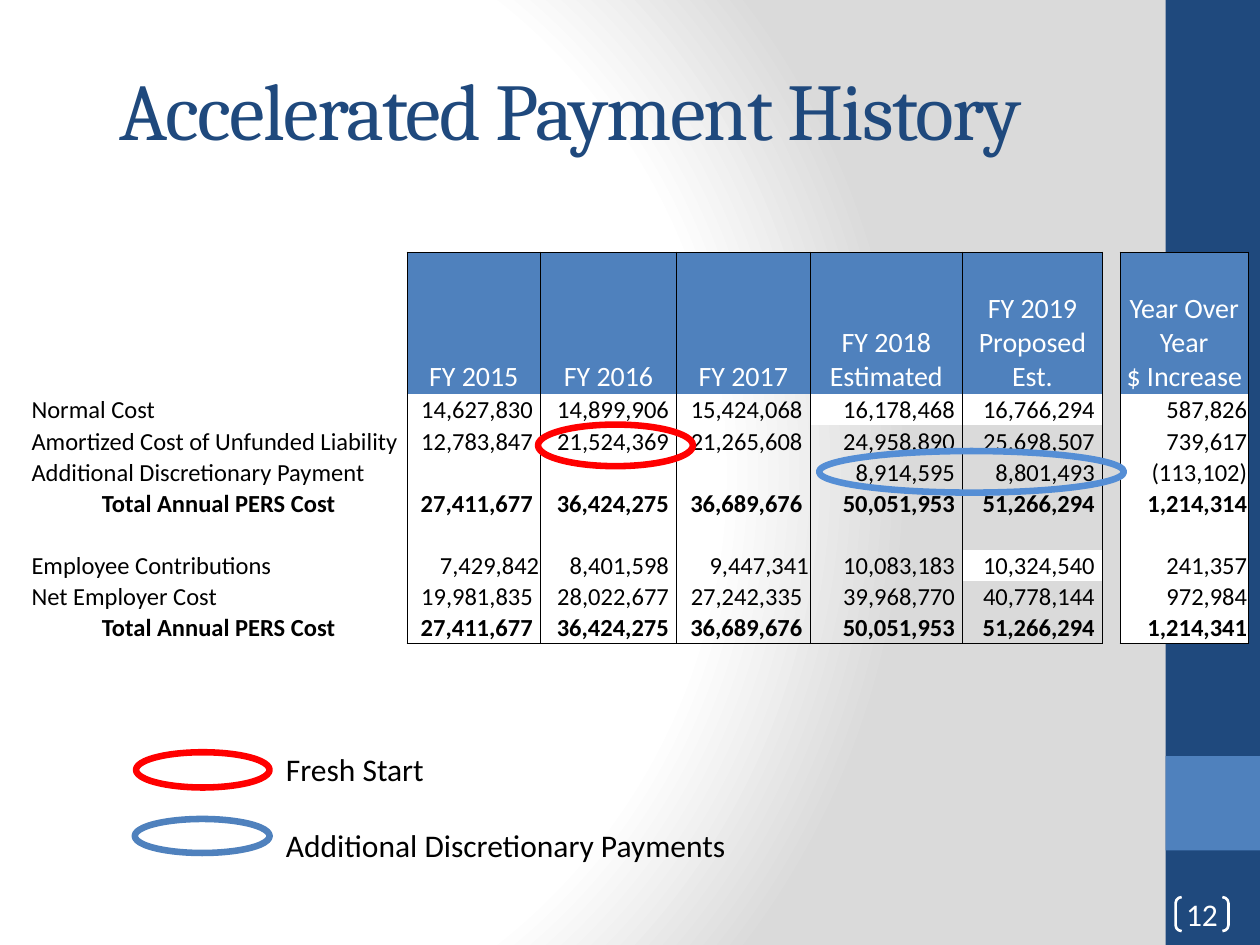
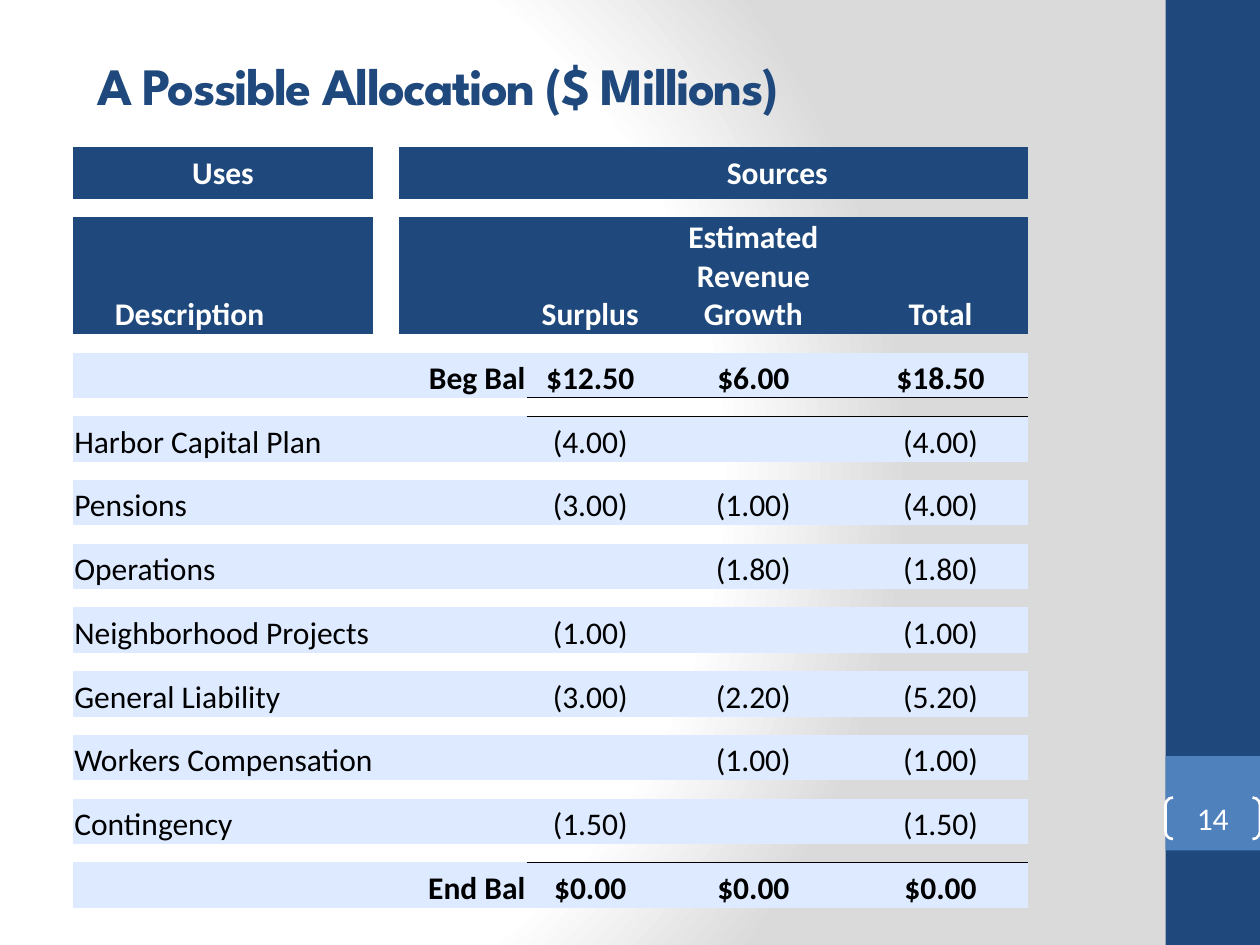
from dataclasses import dataclass
from lxml.etree import SubElement
from pptx import Presentation
from pptx.dml.color import RGBColor
from pptx.enum.shapes import MSO_SHAPE
from pptx.enum.text import MSO_ANCHOR, MSO_AUTO_SIZE, PP_ALIGN
from pptx.oxml import parse_xml
from pptx.oxml.ns import nsdecls, qn
from pptx.util import Inches, Pt

NO_STYLE_TABLE = "{2D5ABB26-0587-4C30-8999-92F81FD0307C}"
LEFT, CENTER, RIGHT = PP_ALIGN.LEFT, PP_ALIGN.CENTER, PP_ALIGN.RIGHT


@dataclass(frozen=True)
class Theme:
    navy: str = "1F497D"
    blue: str = "4F81BD"
    light_blue: str = "558ED5"
    pale_blue: str = "DDEAFF"
    red: str = "FF0000"
    white: str = "FFFFFF"
    gray: str = "DADADA"
    black: str = "000000"
    body_font: str = "Calibri"
    serif_font: str = "Cambria"
    display_font: str = "League Spartan"
    serif_title_size: int = 46
    display_title_size: int = 30
    text_size: int = 18
    header_size: int = 16
    figure_size: int = 14
    empty_size: int = 1
    ring_width: float = 3.75
    bracket_width: float = 1.5
    border_width: float = 0.5


THEME = Theme()


class Deck:
    """Holds the theme and the slide being filled."""

    def __init__(self, theme):
        self.theme = theme
        self.presentation = Presentation()
        self.presentation.slide_width = Inches(10)
        self.presentation.slide_height = Inches(7.5)
        self.slide = None
        self.paint_master_background()

    def paint_master_background(self):
        master = self.presentation.slide_master
        master.background.fill.solid()
        background = master.element.find(".//" + qn("p:bgPr"))
        stops = ((0, self.theme.white), (75, self.theme.white), (100, self.theme.gray))
        stop_list = "".join(
            f'<a:gs pos="{position * 1000}"><a:srgbClr val="{color}"/></a:gs>'
            for position, color in stops)
        background[0] = parse_xml(
            f'<a:gradFill {nsdecls("a")} rotWithShape="1"><a:gsLst>{stop_list}</a:gsLst>'
            '<a:path path="circle"><a:fillToRect l="20000" t="50000" r="100000" b="50000"/>'
            '</a:path></a:gradFill>')

    def add_master_bands(self):
        """Draw the side bands on the slide, then move them behind the master's parts."""
        tree = self.presentation.slide_master.element.find(".//" + qn("p:spTree"))
        bands = ((0, 7.5, self.theme.navy), (6, 0.75, self.theme.blue))
        for index, (top, height, color) in enumerate(bands):
            band = self.add_shape(MSO_SHAPE.RECTANGLE, (9.25, top, 0.75, height), fill=color)
            band.element.nvSpPr.cNvPr.set("id", str(101 + index))
            tree.insert(2 + index, band.element)

    def add_slide(self):
        first = self.slide is None
        layout = self.presentation.slide_layouts[5]
        self.slide = self.presentation.slides.add_slide(layout)
        if first:
            self.add_master_bands()

    def format_paragraph(self, paragraph, size, color, bold=False, font=None, align=LEFT):
        paragraph.alignment = align
        for run in paragraph.runs:
            run.font.name = font or self.theme.body_font
            run.font.size = Pt(size)
            run.font.bold = bold
            run.font.color.rgb = RGBColor.from_string(color)

    def add_title(self, text, box, font, size, bold=False):
        title = self.slide.shapes.title
        title.left, title.top, title.width, title.height = map(Inches, box)
        text_frame = title.text_frame
        text_frame.text = text
        text_frame.auto_size = MSO_AUTO_SIZE.NONE
        text_frame.vertical_anchor = MSO_ANCHOR.MIDDLE
        paragraph = text_frame.paragraphs[0]
        self.format_paragraph(paragraph, size, self.theme.navy, bold, font)
        paragraph.runs[0].font._element.set("spc", "-100")

    def add_shape(self, kind, box, fill=None, line=None, line_width=1):
        shape = self.slide.shapes.add_shape(kind, *map(Inches, box))
        shape.shadow.inherit = False
        if fill:
            shape.fill.solid()
            shape.fill.fore_color.rgb = RGBColor.from_string(fill)
        else:
            shape.fill.background()
        if line:
            shape.line.color.rgb = RGBColor.from_string(line)
            shape.line.width = Pt(line_width)
        else:
            shape.line.fill.background()
        return shape

    def add_ring(self, box, color):
        self.add_shape(MSO_SHAPE.OVAL, box, line=color, line_width=self.theme.ring_width)

    def add_page_number(self, number, box):
        bracket = self.add_shape(MSO_SHAPE.DOUBLE_BRACKET, box, line=self.theme.white,
                                 line_width=self.theme.bracket_width)
        bracket.adjustments[0] = 0.18
        text_frame = bracket.text_frame
        text_frame.margin_left = text_frame.margin_right = 0
        text_frame.margin_top = text_frame.margin_bottom = 0
        text_frame.vertical_anchor = MSO_ANCHOR.MIDDLE
        text_frame.text = str(number)
        self.format_paragraph(text_frame.paragraphs[0], self.theme.text_size,
                              self.theme.white, align=CENTER)

    def add_legend(self, labels, box):
        text_frame = self.slide.shapes.add_textbox(*map(Inches, box)).text_frame
        text_frame.word_wrap = True
        text_frame.margin_left = Inches(1.1)
        text_frame.text = "\n".join(labels)
        for paragraph in text_frame.paragraphs:
            self.format_paragraph(paragraph, self.theme.text_size, self.theme.black)
        for paragraph in text_frame.paragraphs[1:]:
            paragraph.space_before = Pt(22)

    def add_table(self, left, top, widths, heights):
        """Add an empty, unstyled table; widths are in inches, heights are lengths."""
        frame = self.slide.shapes.add_table(
            len(heights), len(widths), Inches(left), Inches(top),
            Inches(sum(widths)), sum(heights))
        table = frame.table
        table.first_row = table.horz_banding = False
        table._tbl.tblPr.find(qn("a:tableStyleId")).text = NO_STYLE_TABLE
        for column, width in zip(table.columns, widths):
            column.width = Inches(width)
        for row, height in zip(table.rows, heights):
            row.height = height
        for cell in table.iter_cells():
            cell.margin_left = cell.margin_right = cell.margin_top = Inches(0.01)
            cell.margin_bottom = 0
            cell.vertical_anchor = MSO_ANCHOR.BOTTOM
            cell.fill.background()
            paragraph = cell.text_frame.paragraphs[0]
            SubElement(paragraph._p, qn("a:endParaRPr"), sz=str(self.theme.empty_size * 100))
        return table

    def fill_cell(self, cell, color):
        cell.fill.solid()
        cell.fill.fore_color.rgb = RGBColor.from_string(color)

    def write_cell(self, cell, text, size, color, bold=False, align=LEFT):
        cell.text_frame.text = text
        for paragraph in cell.text_frame.paragraphs:
            self.format_paragraph(paragraph, size, color, bold, align=align)

    def add_borders(self, cell, sides):
        """Draw the sides, given in the order L, R, T, B."""
        properties = cell._tc.get_or_add_tcPr()
        for index, side in enumerate(sides):
            properties.insert(index, parse_xml(
                f'<a:ln{side} {nsdecls("a")} w="{int(Pt(self.theme.border_width))}">'
                f'<a:solidFill><a:srgbClr val="{self.theme.black}"/></a:solidFill>'
                f'</a:ln{side}>'))


PAYMENT_HEADERS = ("", "FY 2015", "FY 2016", "FY 2017", "FY 2018 Estimated",
                   "FY 2019 Proposed Est.", "", "Year Over Year\n$ Increase")
TOTAL_LABEL = "Total Annual PERS Cost"
PAYMENT_ROWS = (
    ("Normal Cost", "14,627,830", "14,899,906", "15,424,068", "16,178,468",
     "16,766,294", "", "587,826"),
    ("Amortized Cost of Unfunded Liability", "12,783,847", "21,524,369", "21,265,608",
     "24,958,890", "25,698,507", "", "739,617"),
    ("Additional Discretionary Payment", "", "", "", "8,914,595", "8,801,493", "",
     "(113,102)"),
    (TOTAL_LABEL, "27,411,677", "36,424,275", "36,689,676", "50,051,953",
     "51,266,294", "", "1,214,314"),
    ("",) * 8,
    ("Employee Contributions", "7,429,842", "8,401,598", "9,447,341", "10,083,183",
     "10,324,540", "", "241,357"),
    ("Net Employer Cost", "19,981,835", "28,022,677", "27,242,335", "39,968,770",
     "40,778,144", "", "972,984"),
    (TOTAL_LABEL, "27,411,677", "36,424,275", "36,689,676", "50,051,953",
     "51,266,294", "", "1,214,341"),
)
INCREASE_COLUMN = 7
FLUSH_CELLS = {(6, 1), (6, 3)}
WHITE_CELLS = {(1, 4), (1, 5), (6, 5)}

ALLOCATION_ROWS = (
    ("Beg Bal", "$12.50", "$6.00", "$18.50"),
    ("Harbor Capital Plan", "(4.00)", "", "(4.00)"),
    ("Pensions", "(3.00)", "(1.00)", "(4.00)"),
    ("Operations", "", "(1.80)", "(1.80)"),
    ("Neighborhood Projects", "(1.00)", "", "(1.00)"),
    ("General Liability", "(3.00)", "(2.20)", "(5.20)"),
    ("Workers Compensation", "", "(1.00)", "(1.00)"),
    ("Contingency", "(1.50)", "", "(1.50)"),
    ("End Bal", "$0.00", "$0.00", "$0.00"),
)


def add_payment_table(deck):
    theme = deck.theme
    body_height = Inches(1.97) // len(PAYMENT_ROWS)
    table = deck.add_table(0.24, 2, (2.99, 1.06, 1.08, 1.06, 1.21, 1.11, 0.14, 1.02),
                           [Inches(1.13)] + [body_height] * len(PAYMENT_ROWS))
    for column, header in enumerate(PAYMENT_HEADERS):
        if header:
            cell = table.cell(0, column)
            deck.write_cell(cell, header, theme.header_size, theme.white, align=CENTER)
            deck.fill_cell(cell, theme.blue)
            deck.add_borders(cell, "LRT")
    for row, values in enumerate(PAYMENT_ROWS, start=1):
        is_total = values[0] == TOTAL_LABEL
        for column, value in enumerate(values):
            cell = table.cell(row, column)
            if value:
                label_align = CENTER if is_total else LEFT
                deck.write_cell(cell, value, theme.figure_size, theme.black, is_total,
                                RIGHT if column else label_align)
            if 0 < column < INCREASE_COLUMN and (row, column) not in FLUSH_CELLS:
                cell.margin_right = Inches(0.06)
            if column == INCREASE_COLUMN or (row, column) in WHITE_CELLS:
                deck.fill_cell(cell, theme.white)
            if PAYMENT_HEADERS[column]:
                deck.add_borders(cell, "LRB" if row == len(PAYMENT_ROWS) else "LR")


def add_allocation_table(deck):
    theme = deck.theme
    count = len(ALLOCATION_ROWS)
    row_height = Inches(0.36)
    gap = (Inches(4.41) - count * row_height) // (count - 1)
    heights = [Inches(0.41), gap, Inches(0.92)] + [gap, row_height] * count
    table = deck.add_table(0.58, 1.17, (1.85, 0.53, 0.21, 1.01, 1.01, 1.58, 1.39), heights)

    for row in (0, 2):
        for column in (0, 1, 3, 4, 5, 6):
            deck.fill_cell(table.cell(row, column), theme.navy)
    table.cell(0, 0).merge(table.cell(0, 1))
    table.cell(0, 4).merge(table.cell(0, 6))
    headers = ((0, 0, "Uses"), (0, 4, "Sources"), (2, 0, "Description"), (2, 4, "Surplus"),
               (2, 5, "Estimated Revenue Growth"), (2, 6, "Total"))
    for row, column, text in headers:
        cell = table.cell(row, column)
        deck.write_cell(cell, text, theme.text_size, theme.white, True, CENTER)
        if row == 0:
            cell.vertical_anchor = MSO_ANCHOR.MIDDLE

    for index, (label, *amounts) in enumerate(ALLOCATION_ROWS):
        row = 4 + 2 * index
        is_balance = index in (0, count - 1)
        for column in range(7):
            deck.fill_cell(table.cell(row, column), theme.pale_blue)
        if not is_balance:
            table.cell(row, 0).merge(table.cell(row, 2))
        deck.write_cell(table.cell(row, 3 if is_balance else 0), label, theme.text_size,
                        theme.black, is_balance, RIGHT if is_balance else LEFT)
        for column, amount in enumerate(amounts, start=4):
            cell = table.cell(row, column)
            if amount:
                deck.write_cell(cell, amount, theme.text_size, theme.black, is_balance, CENTER)
            if is_balance:
                neighbor = table.cell(row + 1 if index == 0 else row - 1, column)
                deck.add_borders(cell, "B" if index == 0 else "T")
                deck.add_borders(neighbor, "T" if index == 0 else "B")


def build_payment_slide(deck):
    theme = deck.theme
    deck.add_slide()
    deck.add_title("Accelerated Payment History", (0.85, 0.57, 8.33, 0.58),
                   theme.serif_font, theme.serif_title_size)
    add_payment_table(deck)
    deck.add_page_number(12, (9.33, 7.12, 0.42, 0.27))
    deck.add_ring((6.5, 3.58, 2.42, 0.33), theme.light_blue)
    deck.add_ring((4.27, 3.37, 1.23, 0.33), theme.red)
    deck.add_legend(("Fresh Start", "Additional Discretionary Payments"),
                    (1.17, 5.9, 5.5, 1.01))
    deck.add_ring((1.08, 5.97, 1.06, 0.28), theme.red)
    deck.add_ring((1.07, 6.5, 1.07, 0.27), theme.blue)


def build_allocation_slide(deck):
    theme = deck.theme
    deck.add_slide()
    deck.add_title("A Possible Allocation ($ Millions)", (0.67, 0.17, 7.5, 1),
                   theme.display_font, theme.display_title_size, bold=True)
    deck.add_page_number(14, (9.25, 6.33, 0.75, 0.33))
    add_allocation_table(deck)


def main():
    deck = Deck(THEME)
    build_payment_slide(deck)
    build_allocation_slide(deck)
    deck.presentation.save("out.pptx")


if __name__ == "__main__":
    main()
